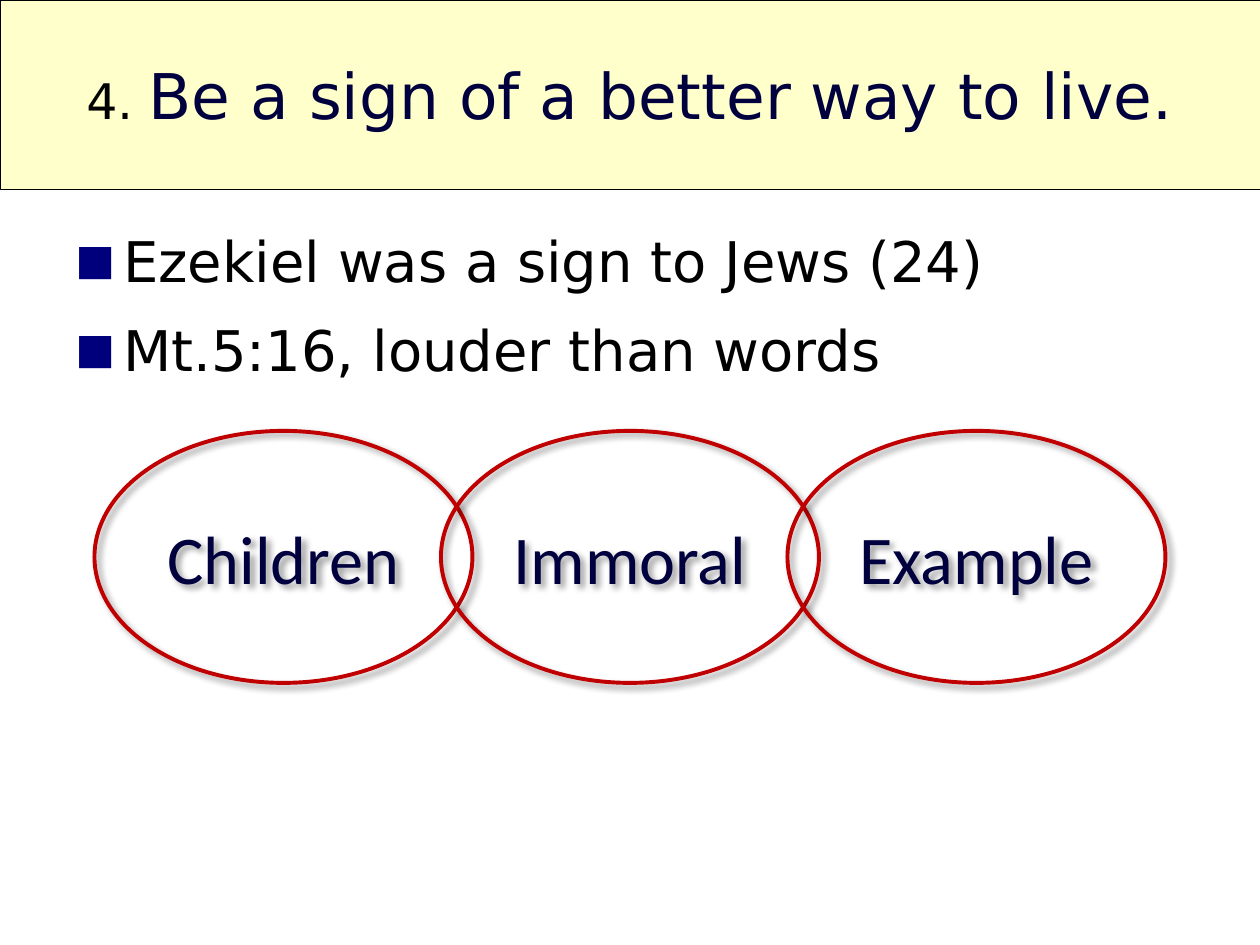
from lxml import etree
from pptx import Presentation
from pptx.dml.color import RGBColor
from pptx.enum.shapes import MSO_SHAPE
from pptx.enum.text import MSO_ANCHOR, PP_ALIGN
from pptx.oxml.ns import qn
from pptx.util import Inches, Pt

RECTANGLE, OVAL = MSO_SHAPE.RECTANGLE, MSO_SHAPE.OVAL
MIDDLE, CENTER = MSO_ANCHOR.MIDDLE, PP_ALIGN.CENTER

COLORS = {"paper": "FFFFCC", "black": "000000", "navy": "00003E",
          "bullet": "00007D", "red": "C00000"}
HEADING_FONT, RING_FONT = "DejaVu Sans", "Calibri"
COLUMNS, ROWS = 40, 30
EMU_PER_POINT = 12700


def add_xml(parent, tag, **attributes):
    return etree.SubElement(parent, qn(tag), attributes)


class SlideBuilder:
    """Places styled elements on a grid of 40 columns by 30 rows."""

    def __init__(self, deck):
        self.slide = deck.slides.add_slide(deck.slide_layouts[6])
        self.column = deck.slide_width / COLUMNS
        self.row = deck.slide_height / ROWS

    def box(self, left, top, width, height):
        return (round(left * self.column), round(top * self.row),
                round(width * self.column), round(height * self.row))

    def styled_run(self, paragraph, text, size, font, color):
        run = paragraph.add_run()
        run.text = text
        run.font.size = Pt(size)
        run.font.name = font
        run.font.color.rgb = RGBColor.from_string(COLORS[color])

    def outlined(self, preset, area, line_color, line_width):
        shape = self.slide.shapes.add_shape(preset, *self.box(*area))
        shape.shadow.inherit = False
        shape.line.color.rgb = RGBColor.from_string(COLORS[line_color])
        shape.line.width = Pt(line_width)
        frame = shape.text_frame
        frame.word_wrap = True
        frame.vertical_anchor = MIDDLE
        frame.paragraphs[0].alignment = CENTER
        return shape

    def title(self, number, heading, area):
        banner = self.outlined(RECTANGLE, area, "black", 0.25)
        banner.fill.solid()
        banner.fill.fore_color.rgb = RGBColor.from_string(COLORS["paper"])
        line = banner.text_frame.paragraphs[0]
        self.styled_run(line, number, 28, HEADING_FONT, "black")
        self.styled_run(line, heading, 36, HEADING_FONT, "navy")

    def bullets(self, points, area):
        frame = self.slide.shapes.add_textbox(*self.box(*area)).text_frame
        frame.word_wrap = True
        for index, point in enumerate(points):
            paragraph = frame.add_paragraph() if index else frame.paragraphs[0]
            self.styled_run(paragraph, point, 32, HEADING_FONT, "black")
            self.square_bullet(paragraph)

    def square_bullet(self, paragraph):
        properties = paragraph._p.get_or_add_pPr()
        indent = Inches(0.38)
        properties.set("marL", str(indent))
        properties.set("indent", str(-indent))
        before = add_xml(properties, "a:spcBef")
        add_xml(before, "a:spcPct", val="20000")
        paragraph.space_after = Pt(6)
        color = add_xml(properties, "a:buClr")
        add_xml(color, "a:srgbClr", val=COLORS["bullet"])
        add_xml(properties, "a:buSzPct", val="75000")
        add_xml(properties, "a:buFont", typeface=HEADING_FONT)
        add_xml(properties, "a:buChar", char="■")

    def ring(self, label, area):
        ring = self.outlined(OVAL, area, "red", 2.25)
        ring.fill.background()
        self.styled_run(ring.text_frame.paragraphs[0], label, 39, RING_FONT, "navy")
        self.soft_shadow(ring)

    def soft_shadow(self, shape):
        effects = shape._element.spPr.find(qn("a:effectLst"))
        shadow = add_xml(effects, "a:outerShdw", blurRad=str(4 * EMU_PER_POINT),
                         dist=str(3 * EMU_PER_POINT), dir=str(45 * 60000),
                         algn="tl", rotWithShape="0")
        color = add_xml(shadow, "a:srgbClr", val=COLORS["black"])
        add_xml(color, "a:alpha", val="40000")


def main():
    deck = Presentation()
    deck.slide_width, deck.slide_height = Inches(10), Inches(7.5)
    builder = SlideBuilder(deck)

    # Title banner
    builder.title("4. ", "Be a sign of a better way to live.", (0, 0, COLUMNS, 6))

    # Main points
    builder.bullets(["Ezekiel was a sign to Jews (24)",
                     "Mt.5:16, louder than words"], (2, 7, 36, 19))

    # Chain of rings, each overlapping the next by one column
    ring_width, overlap = 12, 1
    for link, label in enumerate(["Children", "Immoral", "Example"]):
        left = 3 + link * (ring_width - overlap)
        builder.ring(label, (left, 13.68, ring_width, 8))

    deck.save("out.pptx")


if __name__ == "__main__":
    main()
